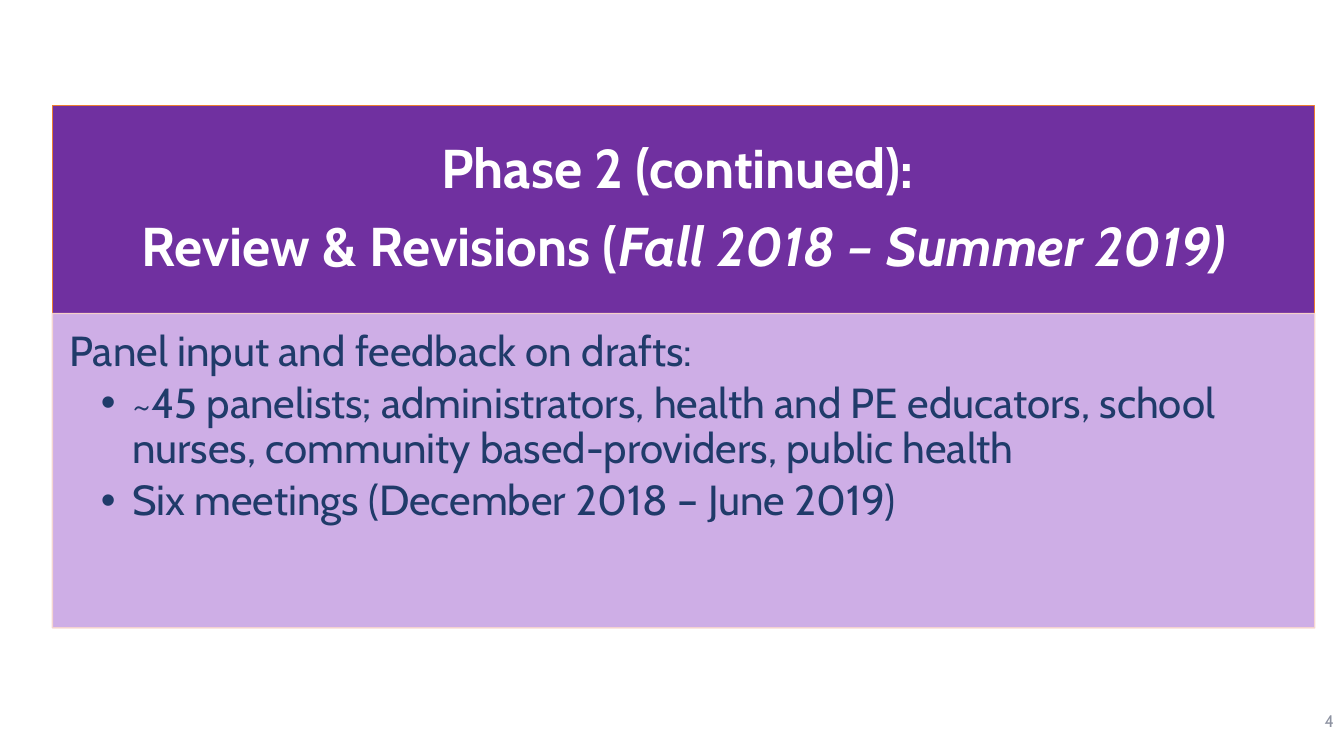
from lxml.etree import SubElement
from pptx import Presentation
from pptx.dml.color import RGBColor
from pptx.enum.shapes import MSO_SHAPE
from pptx.enum.text import MSO_ANCHOR as ANCHOR, PP_ALIGN as ALIGN
from pptx.oxml.ns import qn
from pptx.util import Inches, Pt

FONT = "Cabin"
WHITE, PURPLE, ORANGE = "FFFFFF", "7030A0", "ED7D31"
LILAC, BLUSH, NAVY, GREY = "C9A6E4", "F8D7CE", "203B6A", "8D92A1"
LEFT, WIDTH = 0.52, 12.52
HEADING_TOP, HEADING_HEIGHT, DETAILS_HEIGHT = 1.05, 2.06, 3.12
INDENT = 0.31


def rgb(value):
    return RGBColor.from_string(value)


def set_opacity(fill_format, percent):
    color = fill_format._xPr.find(qn("a:solidFill"))[0]
    SubElement(color, qn("a:alpha"), val=str(percent * 1000))


def add_panel(slide, top, height, fill, line, opacity=100):
    panel = slide.shapes.add_shape(MSO_SHAPE.RECTANGLE, Inches(LEFT), Inches(top),
                                   Inches(WIDTH), Inches(height))
    panel.shadow.inherit = False
    panel.line.width = Pt(1)
    for paint, color in ((panel.fill, fill), (panel.line.fill, line)):
        paint.solid()
        paint.fore_color.rgb = rgb(color)
        if opacity < 100:
            set_opacity(paint, opacity)
    return panel.text_frame


def set_up_frame(frame, anchor, insets):
    """Insets are left, top, right and bottom in inches."""
    frame.word_wrap = True
    frame.vertical_anchor = anchor
    (frame.margin_left, frame.margin_top,
     frame.margin_right, frame.margin_bottom) = map(Inches, insets)


def add_bullet(paragraph):
    properties = paragraph._p.get_or_add_pPr()
    properties.set("marL", str(Inches(2 * INDENT)))
    properties.set("indent", str(-Inches(INDENT)))
    SubElement(properties, qn("a:buFont"), typeface="Arial")
    SubElement(properties, qn("a:buChar"), char="•")


def write(frame, *runs, size, color, align=ALIGN.LEFT, bold=False,
          bullet=False, spacing=1.0, after=0):
    """Add a paragraph; each run is a pair of text and italic flag."""
    paragraph = frame.paragraphs[0]
    if paragraph.runs:
        paragraph = frame.add_paragraph()
    paragraph.alignment = align
    paragraph.line_spacing = spacing
    paragraph.space_after = Pt(after)
    if bullet:
        add_bullet(paragraph)
    for text, italic in runs:
        run = paragraph.add_run()
        run.text = text
        font = run.font
        font.name, font.size, font.bold, font.italic = FONT, Pt(size), bold, italic
        font.color.rgb = rgb(color)


def add_heading(slide):
    heading = add_panel(slide, HEADING_TOP, HEADING_HEIGHT, PURPLE, ORANGE)
    set_up_frame(heading, ANCHOR.MIDDLE, (0.3, 0.17, 0.3, 0.17))
    style = dict(size=39, color=WHITE, align=ALIGN.CENTER, bold=True,
                 spacing=0.9, after=13.65)
    write(heading, ("Phase 2 (continued): ", False), **style)
    write(heading, ("Review & Revisions (", False),
          ("Fall 2018 – Summer 2019)", True), **style)


def add_details(slide):
    details = add_panel(slide, HEADING_TOP + HEADING_HEIGHT, DETAILS_HEIGHT,
                        LILAC, BLUSH, opacity=90)
    set_up_frame(details, ANCHOR.TOP, (0.17, 0.17, 0.23, 0.26))
    style = dict(size=30, color=NAVY, spacing=0.9, after=4.5)
    write(details, ("Panel input and feedback on drafts:", False), **style)
    for item in ("~45 panelists; administrators, health and PE educators, school "
                 "nurses, community based-providers, public health",
                 "Six meetings (December 2018 – June 2019)"):
        write(details, (item, False), bullet=True, **style)


def add_page_number(slide, number):
    box = slide.shapes.add_textbox(Inches(10.33), Inches(6.95), Inches(3), Inches(0.4))
    set_up_frame(box.text_frame, ANCHOR.MIDDLE, (0.1, 0.05, 0.1, 0.05))
    write(box.text_frame, (number, False), size=12, color=GREY, align=ALIGN.RIGHT)


def main():
    deck = Presentation()
    deck.slide_width, deck.slide_height = Inches(13.33), Inches(7.5)
    slide = deck.slides.add_slide(deck.slide_layouts[6])
    add_page_number(slide, "4")
    add_heading(slide)
    add_details(slide)
    deck.save("out.pptx")


if __name__ == "__main__":
    main()
